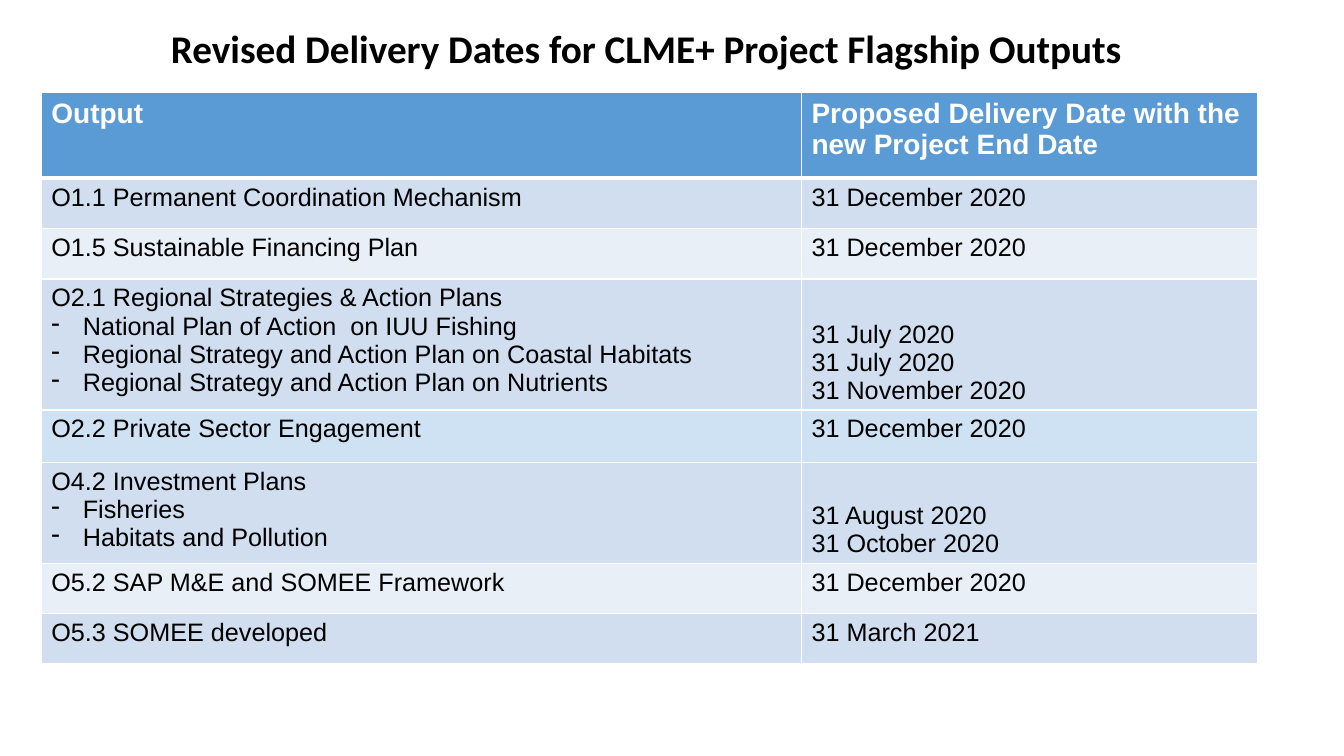
from lxml import etree
from pptx import Presentation
from pptx.dml.color import RGBColor
from pptx.enum import text
from pptx.oxml import ns
from pptx.util import Pt

COLORS = {
    "black": "000000",
    "white": "FFFFFF",
    "header": "5B9BD5",
    "band": "D0DEEF",
    "light": "E9EFF7",
    "sky": "CFE2F3",
}

# Row height, fill, output lines (after the first: dashed), delivery dates
OUTPUTS = [
    (36, "band", ["O1.1 Permanent Coordination Mechanism"], ["31 December 2020"]),
    (36, "light", ["O1.5 Sustainable Financing Plan"], ["31 December 2020"]),
    (88, "band",
     ["O2.1 Regional Strategies & Action Plans",
      "National Plan of Action  on IUU Fishing",
      "Regional Strategy and Action Plan on Coastal Habitats",
      "Regional Strategy and Action Plan on Nutrients"],
     ["31 July 2020", "31 July 2020", "31 November 2020"]),
    (37.5, "sky", ["O2.2 Private Sector Engagement"], ["31 December 2020"]),
    (68, "band",
     ["O4.2 Investment Plans", "Fisheries", "Habitats and Pollution"],
     ["31 August 2020", "31 October 2020"]),
    (36, "light", ["O5.2 SAP M&E and SOMEE Framework"], ["31 December 2020"]),
    (36, "band", ["O5.3 SOMEE developed"], ["31 March 2021"]),
]
HEADER = (61, "header", ["Output"],
          ["Proposed Delivery Date with the new Project End Date"])


class SlideBuilder:
    """Holds the slide and its style."""

    title_font, table_font = "Calibri", "Arial"
    border, header_border = 1, 3
    dash_indent = 22.5

    def __init__(self, slide):
        self.slide = slide

    def style(self, paragraph, font, size, color, bold):
        for run in paragraph.runs:
            run.font.name = font
            run.font.size = Pt(size)
            run.font.bold = bold
            run.font.color.rgb = RGBColor.from_string(COLORS[color])

    def title(self, left, top, width, height, wording):
        frame = self.slide.shapes.add_textbox(
            Pt(left), Pt(top), Pt(width), Pt(height)).text_frame
        frame.word_wrap = True
        frame.text = wording
        self.style(frame.paragraphs[0], self.title_font, 28, "black", True)

    def dash(self, paragraph):
        properties = paragraph._p.get_or_add_pPr()
        properties.set("marL", str(Pt(self.dash_indent)))
        properties.set("indent", str(-Pt(self.dash_indent)))
        etree.SubElement(properties, ns.qn("a:buChar"), char="-")

    def borders(self, cell, top, bottom):
        properties = cell._tc.get_or_add_tcPr()
        widths = {"L": self.border, "R": self.border, "T": top, "B": bottom}
        for side, width in widths.items():
            line = etree.SubElement(properties, ns.qn(f"a:ln{side}"), w=str(Pt(width)))
            fill = etree.SubElement(line, ns.qn("a:solidFill"))
            etree.SubElement(fill, ns.qn("a:srgbClr"), val=COLORS["white"])

    def cell(self, cell, lines, fill, is_header, dashed):
        cell.text_frame.text = "\n".join(lines)
        for index, paragraph in enumerate(cell.text_frame.paragraphs):
            if is_header:
                self.style(paragraph, self.table_font, 20, "white", True)
            else:
                self.style(paragraph, self.table_font, 18, "black", False)
            if dashed and index:
                self.dash(paragraph)
        cell.fill.solid()
        cell.fill.fore_color.rgb = RGBColor.from_string(COLORS[fill])

    def table(self, left, top, widths, rows):
        height = sum(row[0] for row in rows)
        table = self.slide.shapes.add_table(
            len(rows), len(widths), Pt(left), Pt(top), Pt(sum(widths)), Pt(height)).table
        for column, width in zip(table.columns, widths):
            column.width = Pt(width)
        for index, (height, fill, outputs, dates) in enumerate(rows):
            table.rows[index].height = Pt(height)
            above = self.header_border if index == 1 else self.border
            below = self.header_border if index == 0 else self.border
            for column, lines in enumerate((outputs, dates)):
                cell = table.cell(index, column)
                self.borders(cell, above, below)
                self.cell(cell, lines, fill, index == 0, column == 0)
            # Dates of grouped outputs line up with the dashed lines
            if len(outputs) > 1:
                table.cell(index, 1).vertical_anchor = text.MSO_ANCHOR.BOTTOM


def main():
    presentation = Presentation()
    presentation.slide_width, presentation.slide_height = Pt(960), Pt(540)
    slide = presentation.slides.add_slide(presentation.slide_layouts[6])
    builder = SlideBuilder(slide)

    # Title
    builder.title(115, 13.5, 708, 41,
                  "Revised Delivery Dates for CLME+ Project Flagship Outputs")

    # Delivery dates
    builder.table(29.5, 66.25, (543, 326), [HEADER] + OUTPUTS)

    presentation.save("out.pptx")


if __name__ == "__main__":
    main()
